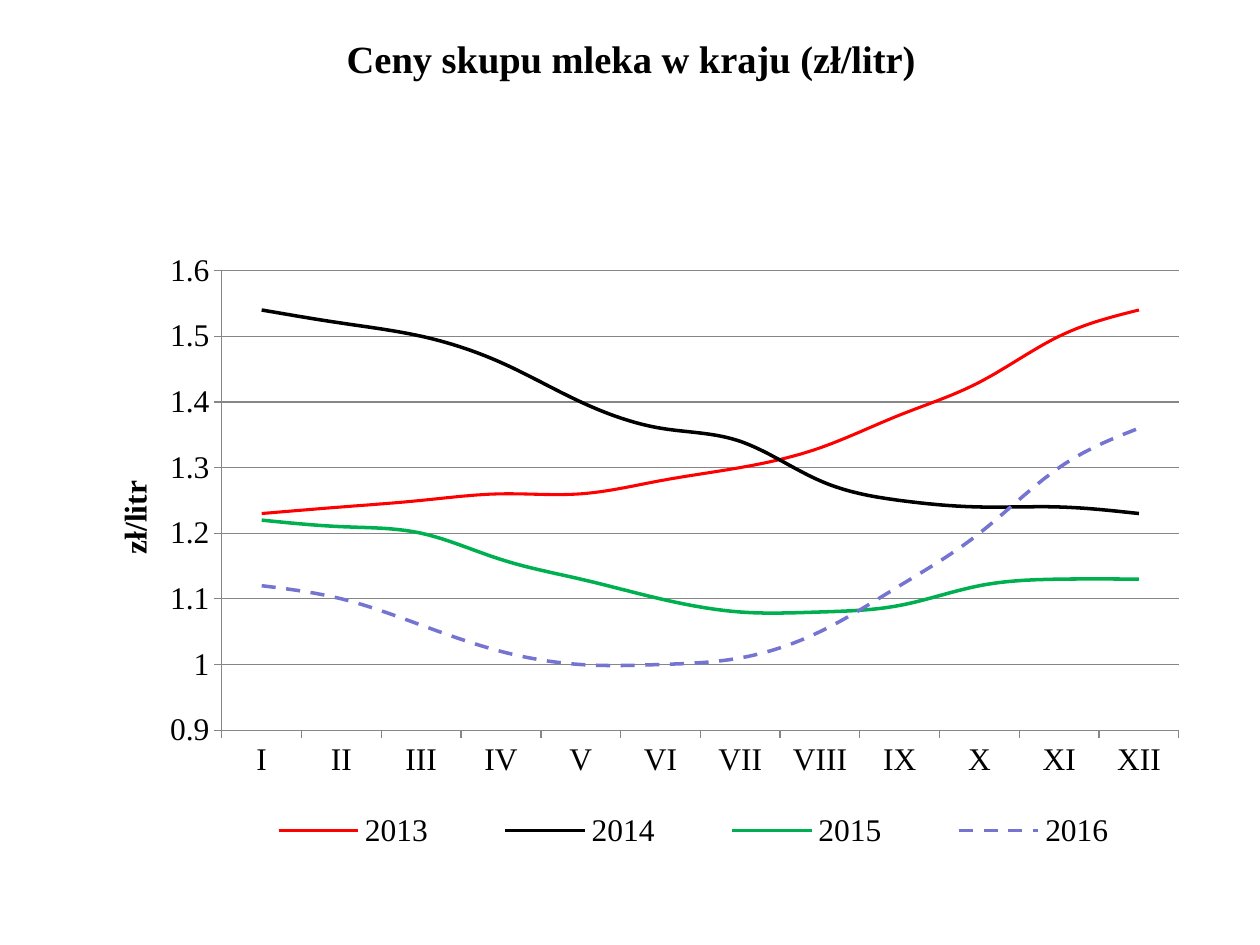
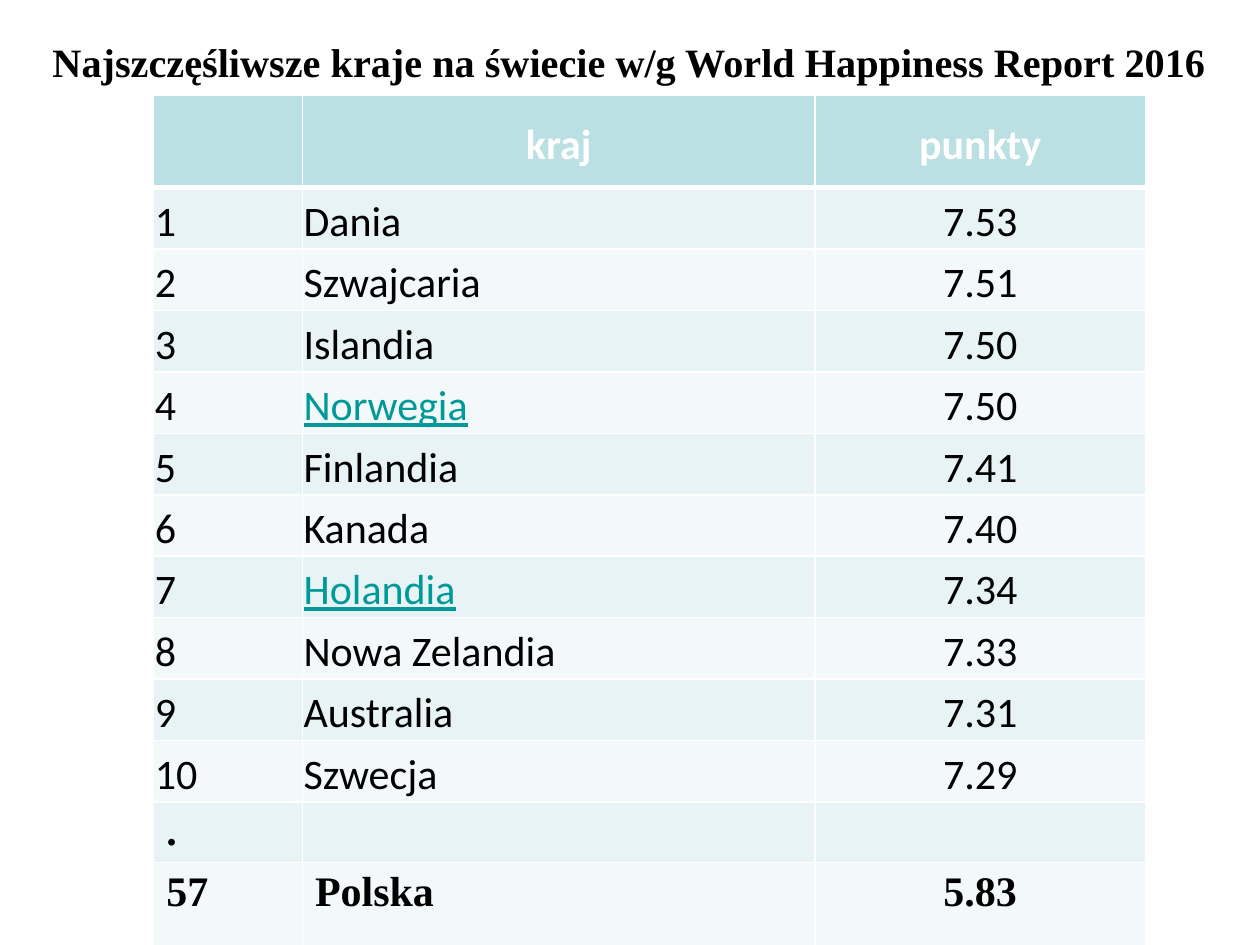
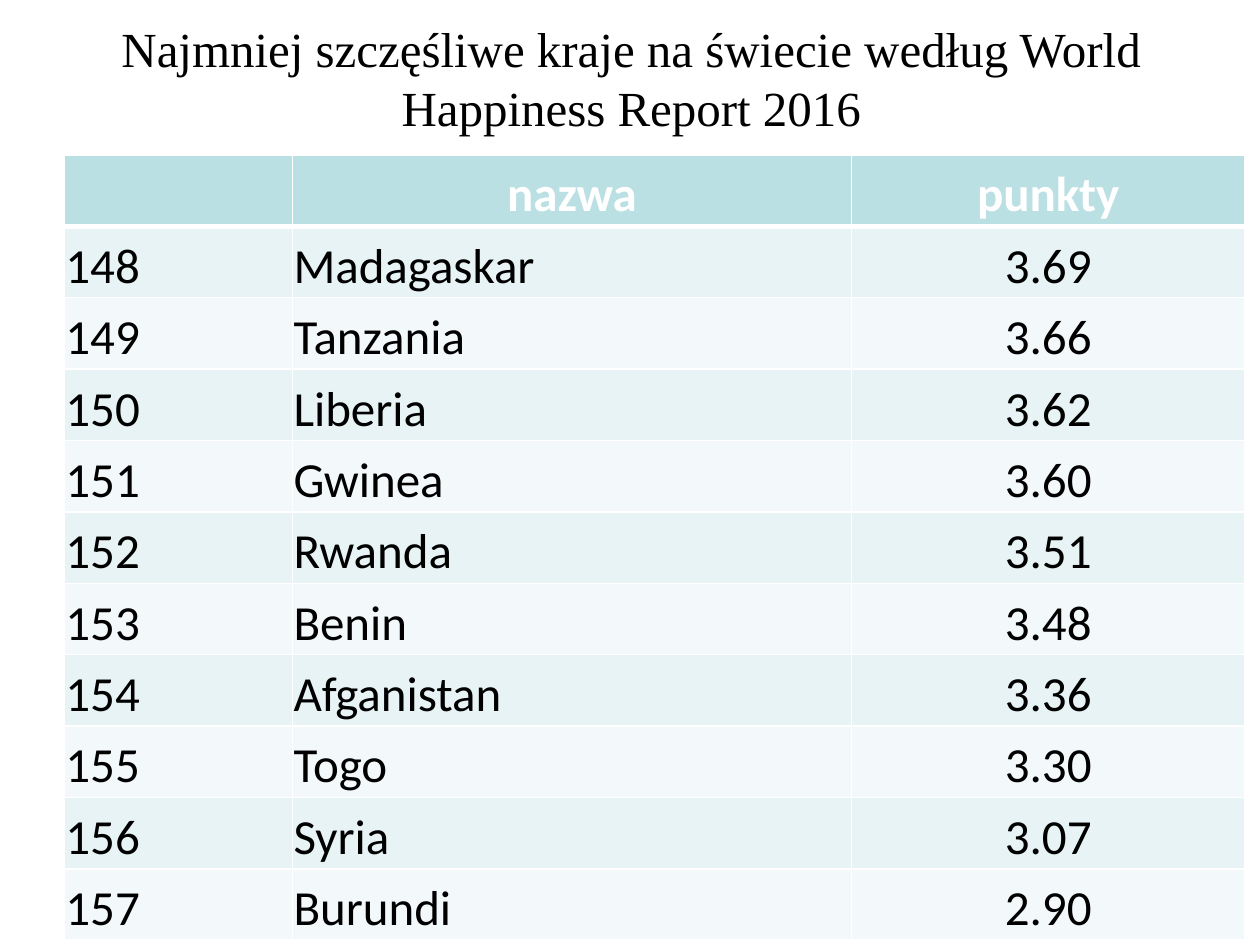
from lxml.etree import SubElement
from pptx import Presentation
from pptx.chart.data import CategoryChartData
from pptx.dml.color import RGBColor
from pptx.enum.chart import XL_CHART_TYPE, XL_LEGEND_POSITION, XL_TICK_MARK
from pptx.enum.dml import MSO_LINE
from pptx.enum.text import MSO_ANCHOR, MSO_AUTO_SIZE, PP_ALIGN
from pptx.oxml import parse_xml
from pptx.oxml.ns import nsdecls, qn
from pptx.util import Inches, Pt

BLACK = RGBColor(0x00, 0x00, 0x00)
WHITE = RGBColor(0xFF, 0xFF, 0xFF)
GRAY = RGBColor(0x86, 0x86, 0x86)
RED = RGBColor(0xFF, 0x00, 0x00)
GREEN = RGBColor(0x00, 0xB0, 0x50)
VIOLET = RGBColor(0x75, 0x75, 0xD1)
TEAL = RGBColor(0x00, 0x99, 0x99)
HEADER = RGBColor(0xBB, 0xE0, 0xE3)
BANDS = [RGBColor(0xF3, 0xF9, 0xFA), RGBColor(0xE7, 0xF3, 0xF4)]
SERIF, SANS = "Times New Roman", "Calibri"

prs = Presentation()
prs.slide_width, prs.slide_height = Inches(10), Inches(7.5)


def add_titled_slide(text, box, size, bold, anchor):
    s = prs.slides.add_slide(prs.slide_layouts[5])
    sp = s.shapes.title
    sp.left, sp.top, sp.width, sp.height = [Inches(v) for v in box]
    tf = sp.text_frame
    tf.text = text
    tf.word_wrap = True
    tf.auto_size = MSO_AUTO_SIZE.NONE
    tf.vertical_anchor = anchor
    tf.margin_top = tf.margin_bottom = 0
    p = tf.paragraphs[0]
    p.alignment = PP_ALIGN.CENTER
    p.font.name, p.font.size, p.font.bold = SERIF, Pt(size), bold
    p.font.color.rgb = BLACK
    return s


def set_layout(element, index, **fractions):
    for old in element.findall(qn("c:layout")):
        element.remove(old)
    layout = parse_xml(f"<c:layout {nsdecls('c')}><c:manualLayout/></c:layout>")
    for tag, value in fractions.items():
        SubElement(layout[0], qn(f"c:{tag}")).set("val", str(value))
    element.insert(index, layout)


# Slide 1: milk prices
s = add_titled_slide("Ceny skupu mleka w kraju (zł/litr)", (0.51, 0.28, 9, 0.63),
                     22, True, MSO_ANCHOR.TOP)
series_rows = [
    ("2013", RED, 1.75, [1.23, 1.24, 1.25, 1.26, 1.26, 1.28, 1.3, 1.33, 1.38, 1.43, 1.5, 1.54]),
    ("2014", BLACK, 2, [1.54, 1.52, 1.5, 1.46, 1.4, 1.36, 1.34, 1.28, 1.25, 1.24, 1.24, 1.23]),
    ("2015", GREEN, 2, [1.22, 1.21, 1.2, 1.16, 1.13, 1.1, 1.08, 1.08, 1.09, 1.12, 1.13, 1.13]),
    ("2016", VIOLET, 2, [1.12, 1.1, 1.06, 1.02, 1, 1, 1.01, 1.05, 1.12, 1.2, 1.3, 1.36]),
]
data = CategoryChartData()
data.categories = "I II III IV V VI VII VIII IX X XI XII".split()
for name, _, _, values in series_rows:
    data.add_series(name, values)
chart = s.shapes.add_chart(XL_CHART_TYPE.LINE, Inches(0.51), Inches(1.94),
                           Inches(9), Inches(4.95), data).chart
chart.has_title = False
chart.font.name, chart.font.size = SERIF, Pt(18)
chart.font.color.rgb = BLACK
plot = chart.plots[0]
plot.vary_by_categories = False
for ser, (_, color, width, _) in zip(plot.series, series_rows):
    ser.smooth = True
    ser.format.line.color.rgb = color
    ser.format.line.width = Pt(width)
plot.series[3].format.line.dash_style = MSO_LINE.DASH

# Axes
axis = chart.value_axis
axis.minimum_scale, axis.maximum_scale, axis.major_unit = 0.9, 1.6, 0.1
axis.has_major_gridlines = True
axis.major_gridlines.format.line.color.rgb = GRAY
for ax in (axis, chart.category_axis):
    ax.major_tick_mark = XL_TICK_MARK.OUTSIDE
    ax.format.line.color.rgb = GRAY
tf = axis.axis_title.text_frame
tf.text = "zł/litr"
tf._txBody.bodyPr.set("rot", "-5400000")
font = tf.paragraphs[0].font
font.name, font.size, font.bold = SERIF, Pt(18), True
font.color.rgb = BLACK

# Legend and placement inside the chart
chart.has_legend = True
chart.legend.position = XL_LEGEND_POSITION.BOTTOM
chart.legend.include_in_layout = False
set_layout(chart._chartSpace.chart.plotArea, 0, layoutTarget="inner", xMode="edge",
           yMode="edge", x=0.139, y=0.042, w=0.844, h=0.737)
set_layout(axis.axis_title._element, 1, xMode="edge", yMode="edge", x=0.04, y=0.37)
set_layout(chart.legend._element, 1, xMode="edge", yMode="edge",
           x=0.13, y=0.9, w=0.85, h=0.08)

# Slides 2 and 3: happiness rankings
happiest = [
    ("", "kraj", "punkty"), ("1", "Dania", "7.53"), ("2", "Szwajcaria", "7.51"),
    ("3", "Islandia", "7.50"), ("4", "Norwegia", "7.50"), ("5", "Finlandia", "7.41"),
    ("6", "Kanada", "7.40"), ("7", "Holandia", "7.34"), ("8", "Nowa Zelandia", "7.33"),
    ("9", "Australia", "7.31"), ("10", "Szwecja", "7.29"), (".", "", ""),
    ("57", "Polska", "5.83"),
]
unhappiest = [
    ("", "nazwa", "punkty"), ("148", "Madagaskar", "3.69"), ("149", "Tanzania", "3.66"),
    ("150", "Liberia", "3.62"), ("151", "Gwinea", "3.60"), ("152", "Rwanda", "3.51"),
    ("153", "Benin", "3.48"), ("154", "Afganistan", "3.36"), ("155", "Togo", "3.30"),
    ("156", "Syria", "3.07"), ("157", "Burundi", "2.90"),
]
underlined = ("Norwegia", "Holandia")
rankings = [
    (add_titled_slide("Najszczęśliwsze kraje na świecie w/g World Happiness Report 2016",
                      (0.12, 0, 9.76, 0.68), 23, True, MSO_ANCHOR.BOTTOM),
     happiest, (1.22, 0.76), (1.18, 4.07, 2.62), [0.73] + [0.46] * 10 + [0.48, 0.68], 24),
    (add_titled_slide("Najmniej szczęśliwe kraje na świecie według World Happiness Report 2016",
                      (0.51, 0, 9, 1.23), 28, False, MSO_ANCHOR.MIDDLE),
     unhappiest, (0.51, 1.23), (1.81, 4.44, 3.12), [0.55] * 11, 28),
]
for s, rows, (left, top), widths, heights, size in rankings:
    table = s.shapes.add_table(len(rows), 3, Inches(left), Inches(top),
                               Inches(sum(widths)), Inches(sum(heights))).table
    table.horz_banding = False
    for col, width in zip(table.columns, widths):
        col.width = Inches(width)
    for i, (row, height) in enumerate(zip(rows, heights)):
        table.rows[i].height = Inches(height)
        header, summary = i == 0, i > 10
        for j, text in enumerate(row):
            cell = table.cell(i, j)
            cell.fill.solid()
            cell.fill.fore_color.rgb = HEADER if header else BANDS[i % 2]

            # White borders, thicker under the header
            borders = {"lnL": 1, "lnR": 1, "lnT": 1, "lnB": 3} if header else \
                      {"lnL": 1, "lnR": 1, "lnB": 1}
            for k, (tag, width) in enumerate(borders.items()):
                cell._tc.get_or_add_tcPr().insert(k, parse_xml(
                    f'<a:{tag} {nsdecls("a")} w="{Pt(width)}"><a:solidFill>'
                    f'<a:srgbClr val="{WHITE}"/></a:solidFill></a:{tag}>'))
            if not text:
                continue

            # Cell text
            cell.text = text
            p = cell.text_frame.paragraphs[0]
            if header or j == 2:
                p.alignment = PP_ALIGN.CENTER
            if not summary:
                cell.vertical_anchor = MSO_ANCHOR.MIDDLE
                cell.margin_left = cell.margin_right = Inches(0.01)
                cell.margin_top = cell.margin_bottom = Inches(0.01)
                p.line_spacing, p.space_after = 1.15, Pt(10)
            p.font.name = SERIF if summary else SANS
            p.font.size, p.font.bold = Pt(size), header or summary
            p.font.color.rgb = WHITE if header else BLACK
            if text in underlined:
                p.font.color.rgb, p.font.underline = TEAL, True

prs.save("out.pptx")
